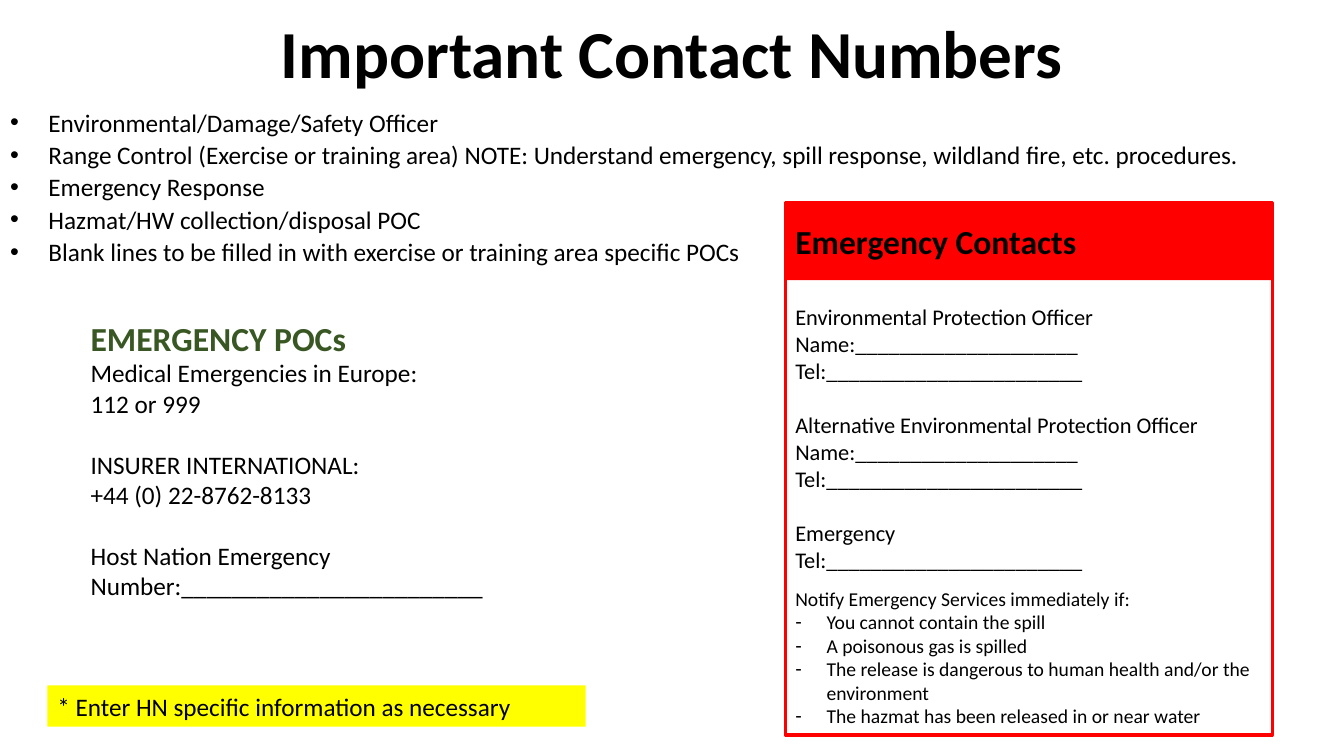
from dataclasses import dataclass

from lxml import etree
from pptx import Presentation
from pptx.dml.color import RGBColor
from pptx.enum.shapes import MSO_SHAPE
from pptx.enum.text import MSO_ANCHOR, MSO_AUTO_SIZE, PP_ALIGN
from pptx.oxml.ns import qn
from pptx.util import Inches, Pt

RECTANGLE = MSO_SHAPE.RECTANGLE
TOP, MIDDLE = MSO_ANCHOR.TOP, MSO_ANCHOR.MIDDLE
LEFT, CENTER = PP_ALIGN.LEFT, PP_ALIGN.CENTER
NO_AUTOFIT = MSO_AUTO_SIZE.NONE

TITLE = "Important Contact Numbers"
CONTACT_TYPES = [
    "Environmental/Damage/Safety Officer",
    "Range Control (Exercise or training area) NOTE: Understand emergency, "
    "spill response, wildland fire, etc. procedures.",
    "Emergency Response",
    "Hazmat/HW collection/disposal POC",
    "Blank lines to be filled in with exercise or training area specific POCs",
]
HOST_NATION_NOTE = "* Enter HN specific information as necessary"
CARD_TITLE = "Emergency Contacts"
NAME_LINE = "Name:" + "_" * 20
PHONE_LINE = "Tel:" + "_" * 23
CARD_CONTACTS = [
    ["Environmental Protection Officer", NAME_LINE, PHONE_LINE],
    ["Alternative Environmental Protection Officer", NAME_LINE, PHONE_LINE],
    ["Emergency", PHONE_LINE],
]
NOTIFY_TITLE = "Notify Emergency Services immediately if:"
NOTIFY_REASONS = [
    "You cannot contain the spill",
    "A poisonous gas is spilled",
    "The release is dangerous to human health and/or the environment",
    "The hazmat has been released in or near water",
]
POC_TITLE = "EMERGENCY POCs"
POC_GROUPS = [
    ["Medical Emergencies in Europe:", "112 or 999"],
    ["INSURER INTERNATIONAL:", "+44 (0) 22-8762-8133"],
    ["Host Nation Emergency Number:" + "_" * 24],
]


@dataclass(frozen=True)
class Theme:
    font: str = "Calibri"
    black: str = "000000"
    white: str = "FFFFFF"
    red: str = "FF0000"
    yellow: str = "FFFF00"
    green: str = "385723"
    title: int = 48
    heading: int = 24
    body: int = 18
    card: int = 16
    small: int = 14


THEME = Theme()
BODY_GAP = 22
CARD_GAP = 19.5
NOTIFY_GAP = 9.75
LINE_SPACING = 1.07


def add_text(frame, text, size=THEME.body, color=THEME.black, bold=False,
             align=LEFT, before=0, spacing=1, bullet=None, indent=0):
    paragraph = frame.paragraphs[0]
    if paragraph.runs:
        paragraph = frame.add_paragraph()
    paragraph.alignment = align
    paragraph.line_spacing = spacing
    paragraph.space_before = Pt(before)
    paragraph.space_after = Pt(0)
    if bullet:
        properties = paragraph._p.get_or_add_pPr()
        properties.set("marL", str(Inches(indent)))
        properties.set("indent", str(-Inches(indent)))
        etree.SubElement(properties, qn("a:buFont")).set("typeface", "Arial")
        etree.SubElement(properties, qn("a:buChar")).set("char", bullet)
    run = paragraph.add_run()
    run.text = text
    run.font.name = THEME.font
    run.font.size = Pt(size)
    run.font.bold = bold
    run.font.color.rgb = RGBColor.from_string(color)


def add_groups(frame, groups, size, gap, first_gap=0):
    for group_index, group in enumerate(groups):
        for line_index, line in enumerate(group):
            space = (gap if group_index else first_gap) if line_index == 0 else 0
            add_text(frame, line, size=size, before=space)


def prepare_frame(shape, anchor):
    frame = shape.text_frame
    frame.word_wrap = True
    frame.auto_size = NO_AUTOFIT
    frame.vertical_anchor = anchor
    return frame


def place_placeholder(placeholder, left, top, width, height):
    placeholder.left, placeholder.top = Inches(left), Inches(top)
    placeholder.width, placeholder.height = Inches(width), Inches(height)
    return prepare_frame(placeholder, TOP)


def add_box(slide, left, top, width, height, fill, line=None, anchor=MIDDLE):
    shape = slide.shapes.add_shape(
        RECTANGLE, Inches(left), Inches(top), Inches(width), Inches(height))
    shape.shadow.inherit = False
    shape.fill.solid()
    shape.fill.fore_color.rgb = RGBColor.from_string(fill)
    if line:
        shape.line.color.rgb = RGBColor.from_string(line)
        shape.line.width = Pt(2.5)
    else:
        shape.line.fill.background()
    return prepare_frame(shape, anchor)


def main():
    presentation = Presentation()
    presentation.slide_width = Inches(13.33)
    presentation.slide_height = Inches(7.5)
    slide = presentation.slides.add_slide(presentation.slide_layouts[1])

    title = place_placeholder(slide.shapes.title, 0, 0.01, 13.33, 0.98)
    add_text(title, TITLE, size=THEME.title, bold=True, align=CENTER,
             spacing=LINE_SPACING)

    contact_types = place_placeholder(slide.placeholders[1], 0, 0.99, 13.33, 1.72)
    for contact_type in CONTACT_TYPES:
        add_text(contact_types, contact_type, spacing=LINE_SPACING,
                 bullet="•", indent=0.38)

    note = add_box(slide, 0.47, 6.8, 5.34, 0.41, THEME.yellow)
    add_text(note, HOST_NATION_NOTE)

    card_left, card_top, card_width, header_height = 7.79, 2.01, 4.83, 0.77
    card = add_box(slide, card_left, card_top, card_width, 5.28,
                   THEME.white, line=THEME.red, anchor=TOP)
    card.margin_top = Inches(1)
    add_groups(card, CARD_CONTACTS, THEME.card, CARD_GAP)
    add_text(card, NOTIFY_TITLE, size=THEME.small, before=NOTIFY_GAP)
    for reason in NOTIFY_REASONS:
        add_text(card, reason, size=THEME.small, bullet="-", indent=0.31)

    header = add_box(slide, card_left, card_top, card_width, header_height, THEME.red)
    add_text(header, CARD_TITLE, size=THEME.heading, bold=True)

    points_of_contact = add_box(slide, 0.8, 3.1, 4.31, 2.93, THEME.white, anchor=TOP)
    add_text(points_of_contact, POC_TITLE, size=THEME.heading,
             color=THEME.green, bold=True)
    add_groups(points_of_contact, POC_GROUPS, THEME.body, BODY_GAP)

    presentation.save("out.pptx")


if __name__ == "__main__":
    main()
